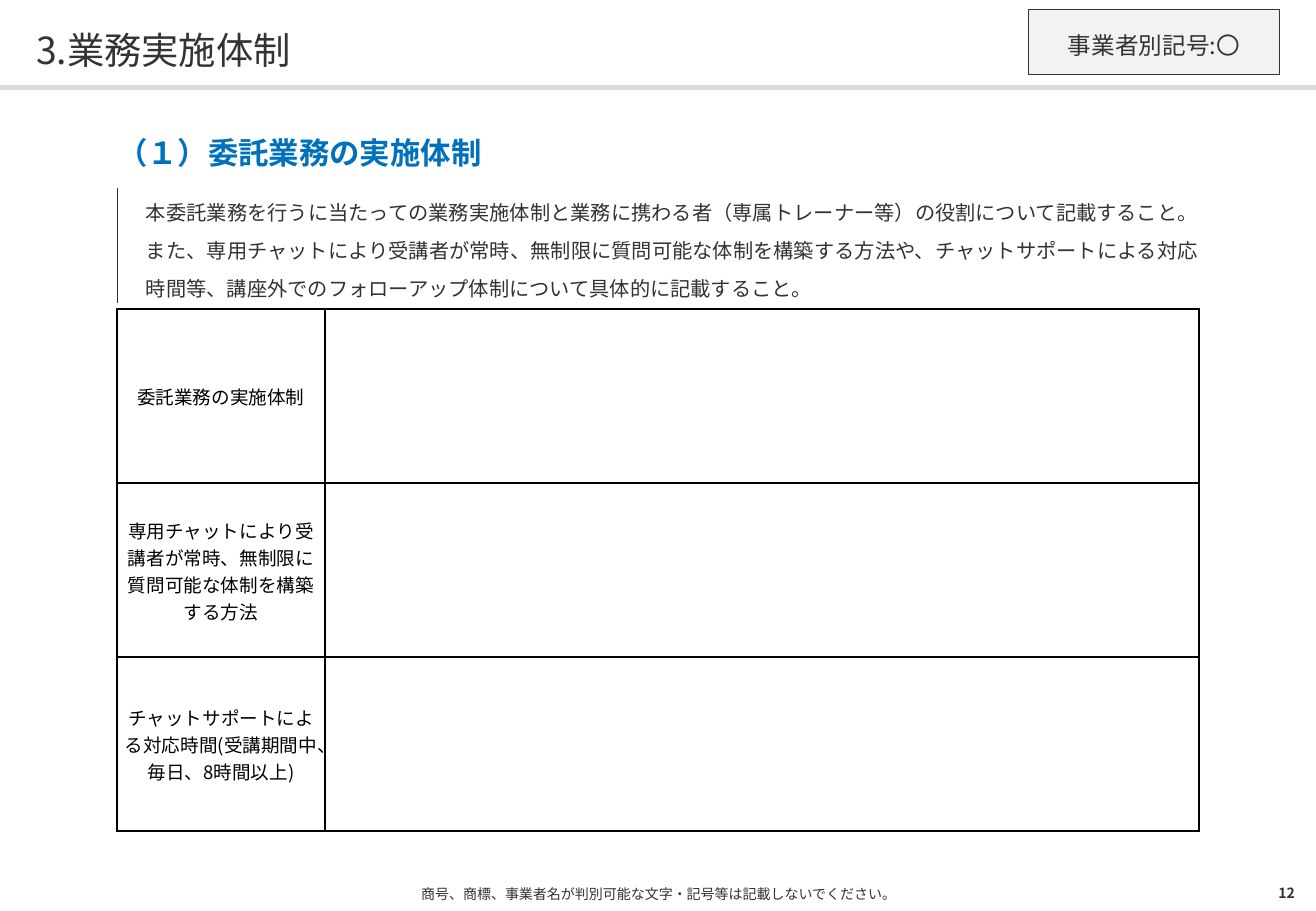
from lxml import etree
from pptx import Presentation
from pptx.dml.color import RGBColor
from pptx.enum.lang import MSO_LANGUAGE_ID
from pptx.enum.shapes import MSO_SHAPE
from pptx.enum.text import MSO_ANCHOR, MSO_AUTO_SIZE, PP_ALIGN
from pptx.oxml.ns import qn
from pptx.util import Emu, Pt

RECTANGLE = MSO_SHAPE.RECTANGLE
TOP, MIDDLE = MSO_ANCHOR.TOP, MSO_ANCHOR.MIDDLE
LEFT, CENTER = PP_ALIGN.LEFT, PP_ALIGN.CENTER
RIGHT, JUSTIFY = PP_ALIGN.RIGHT, PP_ALIGN.JUSTIFY
NO_AUTOSIZE = MSO_AUTO_SIZE.NONE
JAPANESE = MSO_LANGUAGE_ID.JAPANESE

EMU_PER_PX = 7526
TITLE_ONLY = 5
FONT = "Noto Sans CJK JP"
BLACK = RGBColor(0x00, 0x00, 0x00)
DARK = RGBColor(0x33, 0x33, 0x33)
BLUE = RGBColor(0x00, 0x71, 0xBC)
STRIPE = RGBColor(0xD9, 0xD9, 0xD9)
PALE = RGBColor(0xF2, 0xF2, 0xF2)

INSTRUCTIONS = (
    "本委託業務を行うに当たっての業務実施体制と業務に携わる者（専属トレーナー等）の役割について記載すること。"
    "また、専用チャットにより受講者が常時、無制限に質問可能な体制を構築する方法や、チャットサポートによる対応"
    "時間等、講座外でのフォローアップ体制について具体的に記載すること。"
)
ROW_LABELS = (
    "委託業務の実施体制",
    "専用チャットにより受講者が常時、無制限に質問可能な体制を構築する方法",
    "チャットサポートによる対応時間(受講期間中、毎日、8時間以上)",
)


def px(length):
    return Emu(length * EMU_PER_PX)


def write_text(frame, text, size, color=DARK, bold=False, align=LEFT, spacing=1.0):
    paragraph = frame.paragraphs[0]
    paragraph.alignment = align
    paragraph.line_spacing = spacing
    run = paragraph.add_run()
    run.text = text
    font = run.font
    font.size = Pt(size)
    font.bold = bold
    font.color.rgb = color
    font.name = FONT
    font.language_id = JAPANESE
    latin = run._r.get_or_add_rPr().find(qn("a:latin"))
    east_asian = etree.Element(qn("a:ea"), typeface=FONT)
    latin.addnext(east_asian)


def set_insets(target, insets):
    sides = ("margin_left", "margin_top", "margin_right", "margin_bottom")
    for side, inset in zip(sides, insets):
        setattr(target, side, px(inset))


class SlideBuilder:
    def __init__(self, presentation):
        self.slide = presentation.slides.add_slide(presentation.slide_layouts[TITLE_ONLY])
        self.shapes = self.slide.shapes

    def format_frame(self, shape, text, insets=(0, 0, 0, 0), **text_format):
        frame = shape.text_frame
        frame.word_wrap = True
        frame.auto_size = NO_AUTOSIZE
        frame.vertical_anchor = MIDDLE
        set_insets(frame, insets)
        write_text(frame, text, **text_format)

    def title(self, box, text, **text_format):
        shape = self.shapes.title
        shape.left, shape.top, shape.width, shape.height = map(px, box)
        self.format_frame(shape, text, **text_format)

    def text(self, box, text, **text_format):
        shape = self.shapes.add_textbox(*map(px, box))
        self.format_frame(shape, text, **text_format)

    def rectangle(self, box, fill, line=None):
        shape = self.shapes.add_shape(RECTANGLE, *map(px, box))
        shape.shadow.inherit = False
        shape.fill.solid()
        shape.fill.fore_color.rgb = fill
        if line is None:
            shape.line.fill.background()
        else:
            shape.line.color.rgb = line
            shape.line.width = Pt(0.5)
        return shape

    def table(self, left, top, columns, rows):
        box = (left, top, sum(columns), sum(rows))
        table = self.shapes.add_table(len(rows), len(columns), *map(px, box)).table
        table.first_row = table.horz_banding = False
        for column, width in zip(table.columns, columns):
            column.width = px(width)
        for row, height in zip(table.rows, rows):
            row.height = px(height)
        return table

    def cell(self, cell, text="", insets=(0, 0, 0, 0), anchor=TOP, borders=None, **text_format):
        set_insets(cell, insets)
        cell.vertical_anchor = anchor
        properties = cell._tc.get_or_add_tcPr()
        for side in ("L", "R", "T", "B"):
            color, width = (borders or {}).get(side, (None, 0))
            line = etree.SubElement(properties, qn("a:ln" + side), w=str(Pt(width)))
            if color is None:
                etree.SubElement(line, qn("a:noFill"))
            else:
                solid = etree.SubElement(line, qn("a:solidFill"))
                etree.SubElement(solid, qn("a:srgbClr"), val=str(color))
        cell.fill.background()
        if text:
            write_text(cell.text_frame, text, **text_format)


def main():
    presentation = Presentation()
    presentation.slide_width, presentation.slide_height = px(1316), px(911)
    builder = SlideBuilder(presentation)

    builder.rectangle((0, 85, 1316, 5), STRIPE)
    builder.title((36, 21, 1244, 52), "3.業務実施体制", size=22.1, spacing=1.1)

    introduction = builder.table(117, 125, columns=[1082], rows=[63, 114])
    builder.cell(introduction.cell(0, 0), "（１）委託業務の実施体制", insets=(0, 0, 0, 15),
                 size=18, color=BLUE, bold=True, spacing=1.1)
    builder.cell(introduction.cell(1, 0), INSTRUCTIONS, insets=(29, 0, 0, 0),
                 borders={"L": (DARK, 0.5)}, size=12, align=JUSTIFY, spacing=1.3)

    builder.text((108, 876, 1101, 35),
                 "商号、商標、事業者名が判別可能な文字・記号等は記載しないでください。",
                 size=8.3, align=CENTER)
    symbol_box = builder.rectangle((1028, 9, 252, 65), PALE, line=DARK)
    builder.format_frame(symbol_box, "事業者別記号:〇", insets=(29, 19, 29, 15),
                         size=14, align=CENTER, spacing=1.1)
    builder.text((1232, 876, 63, 34), "12", size=8.3, bold=True, align=RIGHT)

    answers = builder.table(117, 309, columns=[208, 874], rows=[174] * len(ROW_LABELS))
    grid = dict.fromkeys("LRTB", (BLACK, 1))
    for row, label in enumerate(ROW_LABELS):
        builder.cell(answers.cell(row, 0), label, insets=(5, 1, 5, 0), anchor=MIDDLE,
                     borders=grid, size=11, color=BLACK, align=CENTER)
        builder.cell(answers.cell(row, 1), borders=grid)

    presentation.save("out.pptx")


if __name__ == "__main__":
    main()
